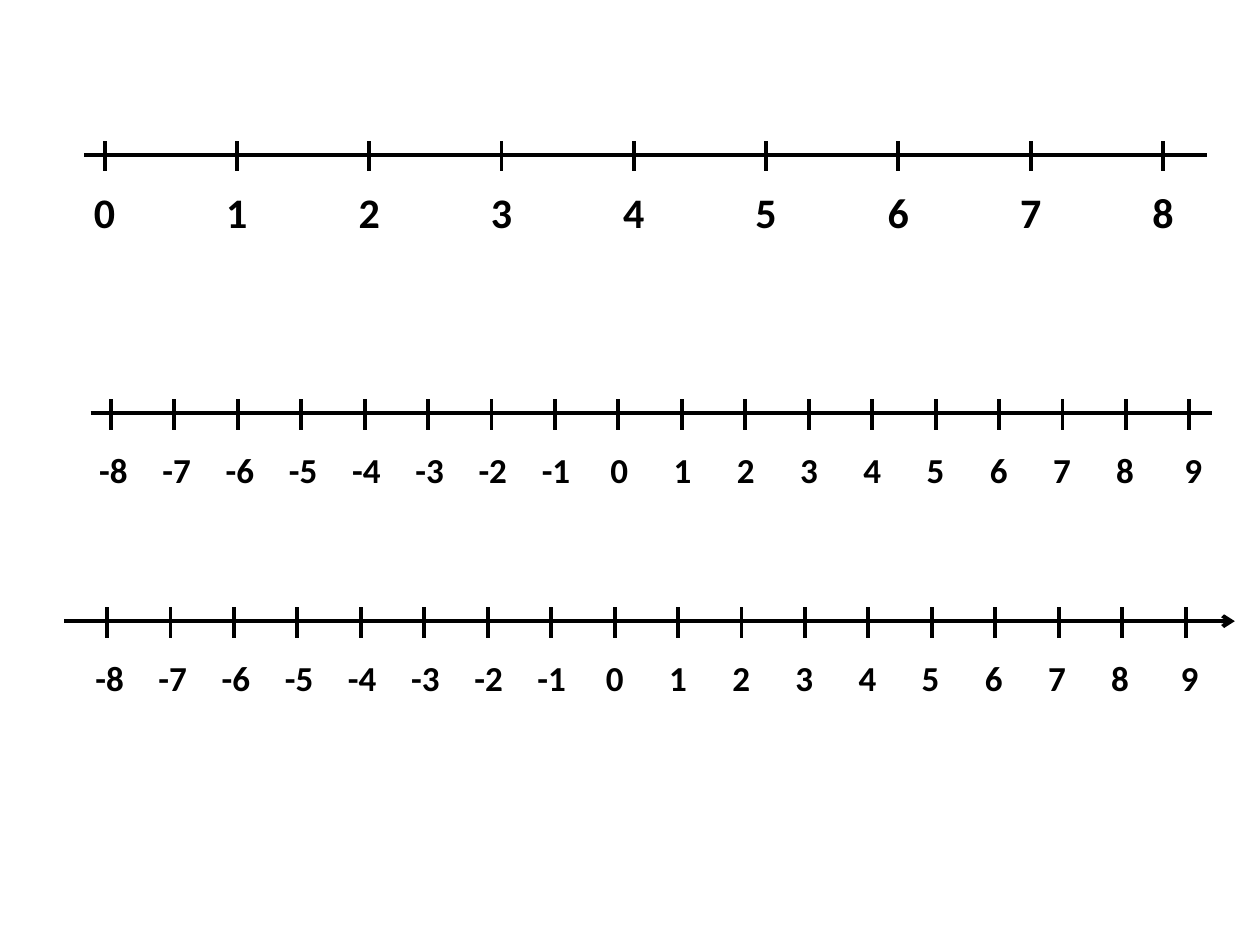
"""Build a slide with three number lines, the last one ending in an arrow."""
from lxml import etree
from pptx import Presentation
from pptx.dml.color import RGBColor
from pptx.enum.shapes import MSO_CONNECTOR
from pptx.enum.text import MSO_AUTO_SIZE, PP_ALIGN
from pptx.oxml.ns import qn
from pptx.util import Inches, Pt

STRAIGHT = MSO_CONNECTOR.STRAIGHT
FIT_TEXT = MSO_AUTO_SIZE.SHAPE_TO_FIT_TEXT
CENTER = PP_ALIGN.CENTER
COLORS = {"ink": "000000"}
INK = RGBColor.from_string(COLORS["ink"])
LABEL_GAP = 0.34
TICK_HEIGHT = 0.24

NUMBER_LINES = [
    {"values": range(0, 9), "axis": (0.67, 9.58), "axis_y": 1.23, "tick_top": 1.12,
     "ticks": (0.83, 9.23), "labels": (0.83, 8.18, 9.23), "label_top": 1.43,
     "size": 24, "box_height": 0.5, "box_widths": (0.37, 0.46), "arrow": False},
    {"values": range(-8, 10), "axis": (0.72, 9.62), "axis_y": 3.28, "tick_top": 3.17,
     "ticks": (0.88, 9.44), "labels": (0.9, 8.93, 9.47), "label_top": 3.51,
     "size": 20, "box_height": 0.44, "box_widths": (0.34, 0.43), "arrow": False},
    {"values": range(-8, 10), "axis": (0.51, 9.8), "axis_y": 4.93, "tick_top": 4.82,
     "ticks": (0.85, 9.41), "labels": (0.87, 8.89, 9.44), "label_top": 5.16,
     "size": 20, "box_height": 0.44, "box_widths": (0.34, 0.43), "arrow": True},
]


def add_line(slide, x1, y1, x2, y2, arrow=False):
    """Draw a straight black line without a shadow."""
    line = slide.shapes.add_connector(
        STRAIGHT, Inches(x1), Inches(y1), Inches(x2), Inches(y2))
    line.line.color.rgb = INK
    line.line.width = Pt(2.25)
    if arrow:
        etree.SubElement(line.line._get_or_add_ln(), qn("a:tailEnd"), type="arrow")
    etree.SubElement(line._element.spPr, qn("a:effectLst"))


def add_label(slide, text, center, top, width, height, size):
    """Write a bold number centred on a point of the number line."""
    box = slide.shapes.add_textbox(
        Inches(center - width / 2), Inches(top), Inches(width), Inches(height))
    frame = box.text_frame
    frame.word_wrap = False
    frame.auto_size = FIT_TEXT
    para = frame.paragraphs[0]
    para.alignment = CENTER
    span = para.add_run()
    span.text = text
    for name, value in {"name": "Calibri", "size": Pt(size), "bold": True}.items():
        setattr(span.font, name, value)
    span.font.color.rgb = INK


deck = Presentation()
deck.slide_width, deck.slide_height = Inches(10), Inches(7.5)
page = deck.slides.add_slide(deck.slide_layouts[6])

for row in NUMBER_LINES:
    left, right = row["axis"]
    add_line(page, left, row["axis_y"], right, row["axis_y"], row["arrow"])

    last = len(row["values"]) - 1
    first_tick, last_tick = row["ticks"]
    first_label, next_to_last_label, last_label = row["labels"]
    tick_step = (last_tick - first_tick) / last
    label_step = (next_to_last_label - first_label) / (last - 1)

    for index, value in enumerate(row["values"]):
        tick_x = first_tick + index * tick_step
        add_line(page, tick_x, row["tick_top"], tick_x, row["tick_top"] + TICK_HEIGHT)
        label_x = last_label if index == last else first_label + index * label_step
        add_label(page, str(value), label_x, row["label_top"],
                  row["box_widths"][value < 0], row["box_height"], row["size"])

deck.save("out.pptx")
